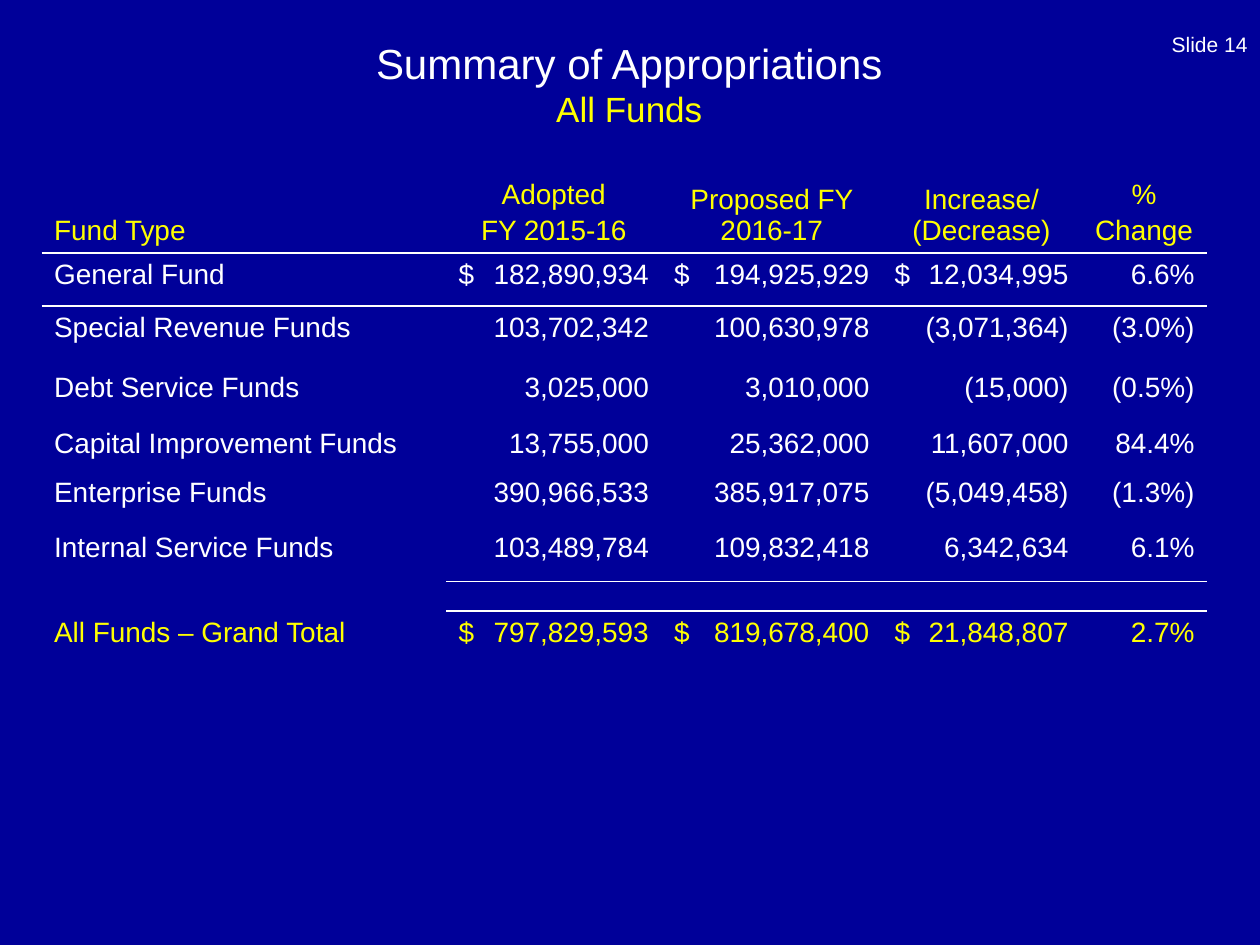
from lxml.etree import SubElement
from pptx import Presentation
from pptx.dml.color import RGBColor
from pptx.enum.text import MSO_ANCHOR as ANCHOR, PP_ALIGN as ALIGN
from pptx.oxml import parse_xml
from pptx.oxml.ns import nsdecls, qn
from pptx.util import Inches, Pt

NAVY = RGBColor(0x00, 0x00, 0x99)
WHITE = RGBColor(0xFF, 0xFF, 0xFF)
YELLOW = RGBColor(0xFF, 0xFF, 0x00)
NO_STYLE = "{2D5ABB26-0587-4C30-8999-92F81FD0307C}"

COLS = [3.21, 1.71, 1.75, 1.58, 1]
ROWS = [0.64, 0.42, 0.48, 0.44, 0.39, 0.44, 0.44, 0.23, 0.44]
MARGIN = 0.1
DATA = [
    ["Fund Type", "Adopted\nFY 2015-16", "Proposed FY 2016-17",
     "Increase/ (Decrease)", "%\nChange"],
    ["General Fund", "$\t182,890,934", "$\t194,925,929", "$\t12,034,995", "6.6%"],
    ["Special Revenue Funds", "103,702,342", "100,630,978", "(3,071,364)", "(3.0%)"],
    ["Debt Service Funds", "3,025,000", "3,010,000", "(15,000)", "(0.5%)"],
    ["Capital Improvement Funds", "13,755,000", "25,362,000", "11,607,000", "84.4%"],
    ["Enterprise Funds", "390,966,533", "385,917,075", "(5,049,458)", "(1.3%)"],
    ["Internal Service Funds", "103,489,784", "109,832,418", "6,342,634", "6.1%"],
    [""] * 5,
    ["All Funds – Grand Total", "$\t797,829,593", "$\t819,678,400", "$\t21,848,807", "2.7%"],
]
HEADER, SPACER, TOTAL = 0, 7, 8
RULED = {(HEADER, c) for c in range(5)} | {(SPACER - 1, c) for c in range(1, 5)}


def style(r, size, color):
    r.font.name = "Arial"
    r.font.size = Pt(size)
    r.font.color.rgb = color


def add_rule(cell, side):
    """Draw a thin white border on one side of a table cell."""
    cell._tc.get_or_add_tcPr().insert(0, parse_xml(
        f'<a:{side} {nsdecls("a")} w="12700"><a:solidFill>'
        f'<a:srgbClr val="{WHITE}"/></a:solidFill></a:{side}>'))


prs = Presentation()
prs.slide_width, prs.slide_height = Inches(10), Inches(7.5)
s = prs.slides.add_slide(prs.slide_layouts[6])
s.background.fill.solid()
s.background.fill.fore_color.rgb = NAVY

# Slide number and title
for box, text, align, anchor, looks in [
    ((7.67, 0, 2.33, 0.5), "Slide 14", ALIGN.RIGHT, ANCHOR.BOTTOM, [(12, WHITE)]),
    ((0.33, 0.33, 9.33, 0.67), "Summary of Appropriations\vAll Funds",
     ALIGN.CENTER, ANCHOR.MIDDLE, [(24, WHITE), (20, YELLOW)]),
]:
    tf = s.shapes.add_textbox(*map(Inches, box)).text_frame
    tf.word_wrap = True
    tf.vertical_anchor = anchor
    p = tf.paragraphs[0]
    p.text = text
    p.alignment = align
    for r, (size, color) in zip(p.runs, looks):
        style(r, size, color)

# Appropriations table
table = s.shapes.add_table(len(ROWS), len(COLS), Inches(0.33), Inches(1.33),
                           Inches(sum(COLS)), Inches(sum(ROWS))).table
table.first_row = table.horz_banding = False
table._tbl.tblPr.find(qn("a:tableStyleId")).text = NO_STYLE
for column, width in zip(table.columns, COLS):
    column.width = Inches(width)

for i, (height, values) in enumerate(zip(ROWS, DATA)):
    table.rows[i].height = Inches(height)
    for j, value in enumerate(values):
        cell = table.cell(i, j)
        cell.fill.background()
        if (i, j) in RULED:
            add_rule(cell, "lnB")
        if (i - 1, j) in RULED:
            add_rule(cell, "lnT")
        if i == HEADER:
            cell.vertical_anchor = ANCHOR.BOTTOM
        cell.text_frame.text = value
        for n, p in enumerate(cell.text_frame.paragraphs):
            if n:
                p.space_before = Pt(3.2)
            if not value:
                SubElement(p._p, qn("a:endParaRPr"), sz="800")
            if "\t" in value:
                # Dollar sign at the left edge, figure against a right tab
                p.alignment = ALIGN.LEFT
                tabs = SubElement(p._p.get_or_add_pPr(), qn("a:tabLst"))
                stop = Inches(COLS[j] - 2 * MARGIN)
                SubElement(tabs, qn("a:tab"), pos=str(stop), algn="r")
            elif j:
                p.alignment = ALIGN.CENTER if i == HEADER else ALIGN.RIGHT
            for r in p.runs:
                style(r, 16, YELLOW if i in (HEADER, TOTAL) else WHITE)

prs.save("out.pptx")
